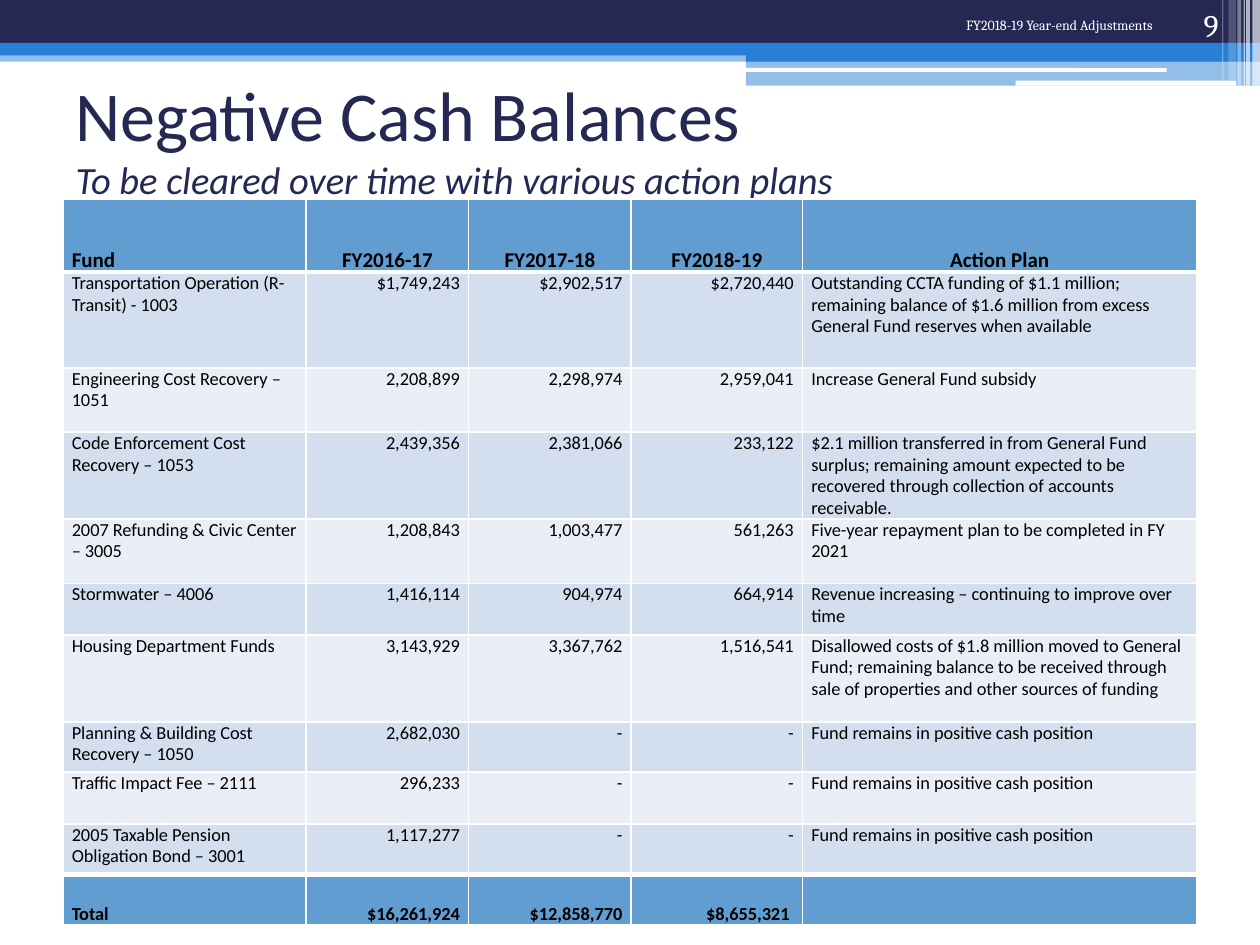
from lxml import etree
from pptx import Presentation
from pptx.dml.color import RGBColor
from pptx.enum import shapes, text
from pptx.oxml import ns
from pptx.util import Inches, Pt

HUES = {"navy": "242852", "blue": "297FD5", "white": "FFFFFF", "black": "000000",
        "head": "629DD1", "odd": "D3DFEE", "even": "EAEFF7"}
LEFT, MID, RIGHT = text.PP_ALIGN.LEFT, text.PP_ALIGN.CENTER, text.PP_ALIGN.RIGHT


def write(para, words, size=10.5, font="Calibri", hue="black", bold=False,
          slant=False, align=LEFT, space=1.0):
    para.alignment, para.line_spacing = align, space
    run = para.add_run()
    run.text = words
    run.font.size, run.font.name = Pt(size), font
    run.font.bold, run.font.italic = bold, slant
    run.font.color.rgb = RGBColor.from_string(HUES[hue])


def edge(cell, side, width):
    line = etree.SubElement(cell._tc.get_or_add_tcPr(), ns.qn("a:" + side), w=str(Pt(width)))
    fill = etree.SubElement(line, ns.qn("a:solidFill"))
    etree.SubElement(fill, ns.qn("a:srgbClr"), val=HUES["white"])


deck = Presentation()
deck.slide_width, deck.slide_height = Inches(10), Inches(7.5)
slide = deck.slides.add_slide(deck.slide_layouts[5])

# Top band: left, top, width, height, colour, opacity in percent, rounded
bars = [
    (0, 0.4, 10, 0.09, "blue", 50, False),
    (0, 0, 10, 0.34, "navy", 100, False),
    (0, 0.34, 10, 0.1, "blue", 100, False),
    (5.92, 0.39, 4.08, 0.1, "blue", 100, False),
    (5.92, 0.48, 4.08, 0.2, "blue", 50, False),
    (5.91, 0.54, 3.35, 0.03, "white", 100, True),
    (8.06, 0.64, 1.75, 0.04, "white", 100, True),
    (9.94, 0, 0.06, 0.68, "white", 65, False),
    (9.89, 0, 0.03, 0.68, "white", 65, False),
    (9.87, 0, 0.01, 0.68, "white", 60, False),
    (9.82, 0, 0.03, 0.68, "white", 40, False),
    (9.75, 0, 0.06, 0.64, "white", 20, False),
    (9.7, 0, 0.01, 0.64, "white", 30, False),
]
kinds = shapes.MSO_SHAPE
for x, y, w, h, hue, clear, curved in bars:
    bar = slide.shapes.add_shape(kinds.ROUNDED_RECTANGLE if curved else kinds.RECTANGLE,
                                 Inches(x), Inches(y), Inches(w), Inches(h))
    bar.shadow.inherit = False
    bar.line.fill.background()
    bar.fill.solid()
    bar.fill.fore_color.rgb = RGBColor.from_string(HUES[hue])
    if clear < 100:
        tint = bar._element.spPr.find(".//" + ns.qn("a:srgbClr"))
        etree.SubElement(tint, ns.qn("a:alpha"), val=str(clear * 1000))

# Title, moved in front of the band
title = slide.shapes.title
slide.shapes._spTree.append(title._element)
title.left, title.top, title.width, title.height = Inches(0.5), Inches(0.5), Inches(9), Inches(1.17)
frame = title.text_frame
frame.auto_size = text.MSO_AUTO_SIZE.NONE
frame.vertical_anchor = text.MSO_ANCHOR.MIDDLE
para = frame.paragraphs[0]
write(para, "Negative Cash Balances", size=40, hue="navy")
para.add_line_break()
etree.SubElement(para._p[-1], ns.qn("a:rPr"), sz="4000")
write(para, "To be cleared over time with various action plans", size=22, hue="navy", slant=True)

# Table of funds
stays = "Fund remains in positive cash position"
rows = [
    ("Fund", "FY2016-17", "FY2017-18", "FY2018-19", "Action Plan"),
    ("Transportation Operation (R-Transit) - 1003", "$1,749,243", "$2,902,517", "$2,720,440",
     "Outstanding CCTA funding of $1.1 million; remaining balance of $1.6 million "
     "from excess General Fund reserves when available"),
    ("Engineering Cost Recovery – 1051", "2,208,899", "2,298,974", "2,959,041",
     "Increase General Fund subsidy"),
    ("Code Enforcement Cost Recovery – 1053", "2,439,356", "2,381,066", "233,122",
     "$2.1 million transferred in from General Fund surplus; remaining amount "
     "expected to be recovered through collection of accounts receivable."),
    ("2007 Refunding & Civic Center – 3005", "1,208,843", "1,003,477", "561,263",
     "Five-year repayment plan to be completed in FY 2021"),
    ("Stormwater – 4006", "1,416,114", "904,974", "664,914",
     "Revenue increasing – continuing to improve over time"),
    ("Housing Department Funds", "3,143,929", "3,367,762", "1,516,541",
     "Disallowed costs of $1.8 million moved to General Fund; remaining balance to be "
     "received through sale of properties and other sources of funding"),
    ("Planning & Building Cost Recovery – 1050", "2,682,030", "-", "-", stays),
    ("Traffic Impact Fee – 2111", "296,233", "-", "-", stays),
    ("2005 Taxable Pension Obligation Bond – 3001", "1,117,277", "-", "-", stays),
    ("Total", "$16,261,924", "$12,858,770", "$8,655,321 ", ""),
]
wide = [1.93, 1.29, 1.29, 1.36, 3.13]
high = [0.58, 0.76, 0.51, 0.69, 0.51, 0.41, 0.69, 0.4, 0.41, 0.4, 0.4]
last = len(rows) - 1
grid = slide.shapes.add_table(len(rows), len(wide), Inches(0.5), Inches(1.58),
                              Inches(sum(wide)), Inches(sum(high))).table
grid.first_row = grid.horz_banding = False
for col, size in zip(grid.columns, wide):
    col.width = Inches(size)
for r, row in enumerate(rows):
    grid.rows[r].height = Inches(high[r])
    ends = r in (0, last)
    for c, words in enumerate(row):
        cell = grid.cell(r, c)
        cell.margin_left = cell.margin_right = Inches(0.07)
        cell.margin_top = cell.margin_bottom = 0
        cell.vertical_anchor = text.MSO_ANCHOR.BOTTOM if ends else text.MSO_ANCHOR.TOP
        for side in ("lnL", "lnR", "lnT", "lnB"):
            thick = (side == "lnB" and r in (0, last - 1)) or (side == "lnT" and r in (1, last))
            edge(cell, side, 3 if thick else 1)
        cell.fill.solid()
        band = "head" if ends else "odd" if r % 2 else "even"
        cell.fill.fore_color.rgb = RGBColor.from_string(HUES[band])
        if r == 0:
            align = MID if c else LEFT
        else:
            align = RIGHT if c in (1, 2, 3) else LEFT
        if words:
            write(cell.text_frame.paragraphs[0], words, size=10.5 if r else 12,
                  bold=ends, align=align, space=0.97)

# Header note and page number
for x, y, w, h, words, size, anchor in [
        (7.25, 0.08, 2, 0.5, "FY2018-19 Year-end Adjustments", 8, text.MSO_ANCHOR.TOP),
        (8.94, 0, 0.83, 0.4, "9", 18, text.MSO_ANCHOR.BOTTOM)]:
    frame = slide.shapes.add_textbox(Inches(x), Inches(y), Inches(w), Inches(h)).text_frame
    frame.word_wrap, frame.vertical_anchor = True, anchor
    write(frame.paragraphs[0], words, size=size, font="Cambria", hue="white", align=RIGHT)

deck.save("out.pptx")
